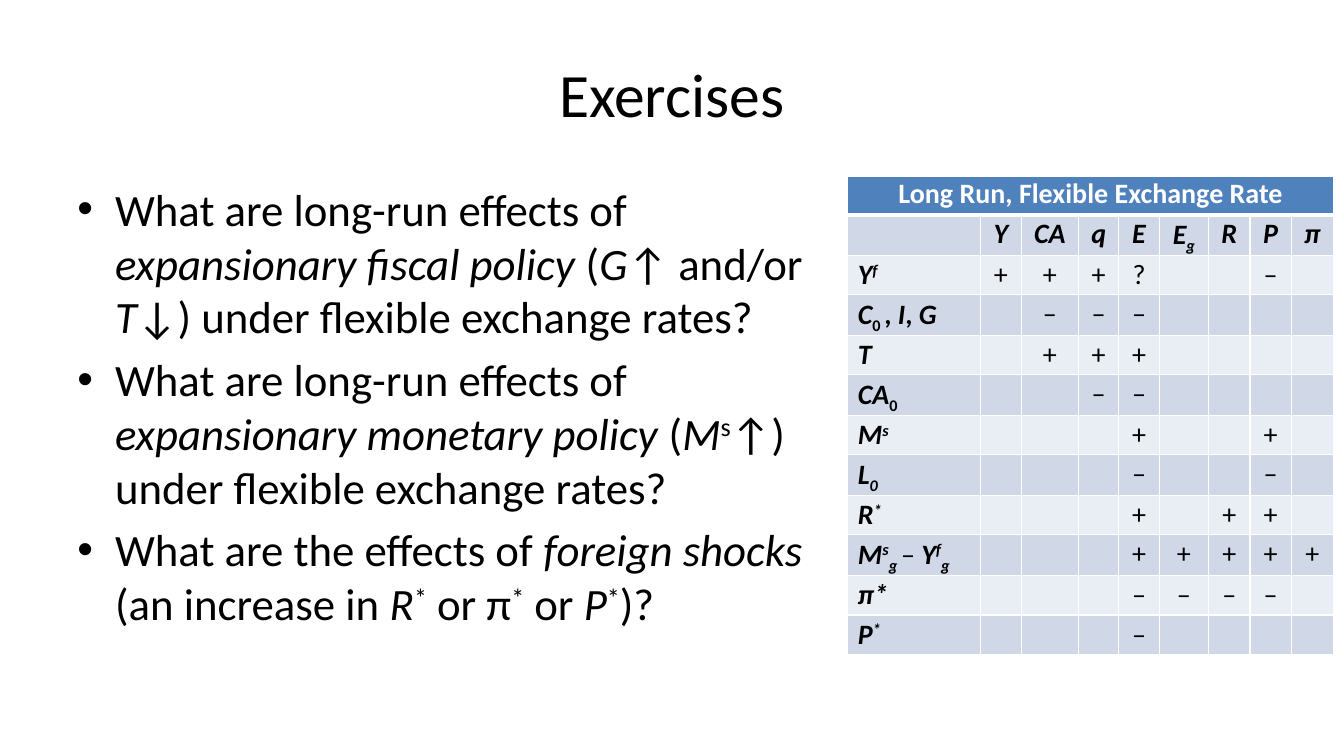
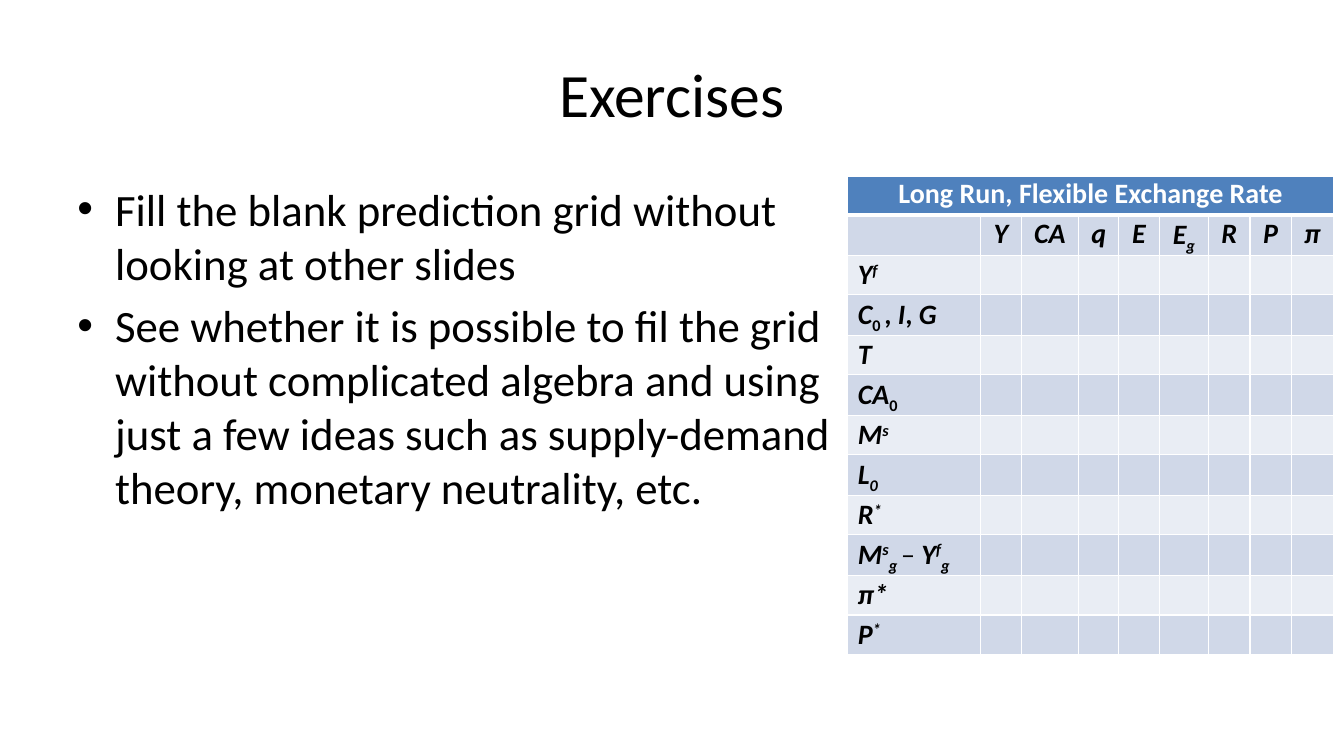
"""Build two exercise slides with a long-run prediction grid."""
import pptx
import pptx.dml.color
import pptx.enum.text
import pptx.oxml.ns
import pptx.util
from lxml import etree

WIDTH = pptx.util.Inches(13.33)
HEIGHT = pptx.util.Inches(7.5)
FONT = "Calibri"
COLORS = {
    "text": "000000",
    "white": "FFFFFF",
    "header": "4F81BD",
    "dark band": "D0D8E8",
    "light band": "E9EDF4",
}
TITLE_BOX = (0.05, 0.04, 0.9, 1 / 6)
CONTENT_TOP = 7 / 30
BODY_BOX = (0.05, CONTENT_TOP, 0.58, 0.66)
GRID_LEFT = 0.63
COLUMN_WIDTHS = (1.32, 0.4, 0.57, 0.4, 0.4, 0.49, 0.41, 0.41, 0.42)
HEADER_HEIGHT = 0.38
ROW_HEIGHT = 0.39
BASELINES = {"^": "30000", "_": "-25000"}

GRID_TITLE = "Long Run, Flexible Exchange Rate"
VARIABLES = (
    [("Y", "bi")],
    [("CA", "bi")],
    [("q", "bi")],
    [("E", "bi")],
    [("E", "bi"), ("g", "bi_")],
    [("R", "bi")],
    [("P", "bi")],
    [("π", "bi")],
)
SHOCKS = (
    ([("Y", "bi"), ("f", "bi^")], "+++?  – "),
    ([("C", "bi"), ("0 ", "b_"), (", ", "b"), ("I", "bi"), (", ", "b"), ("G", "bi")], " –––    "),
    ([("T", "bi")], " +++    "),
    ([("CA", "bi"), ("0", "b_")], "  ––    "),
    ([("M", "bi"), ("s", "bi^")], "   +  + "),
    ([("L", "bi"), ("0", "bi_")], "   –  – "),
    ([("R", "bi"), ("*", "bi^")], "   + ++ "),
    ([("M", "bi"), ("s", "bi^"), ("g ", "bi_"), ("– ", ""),
      ("Y", "bi"), ("f", "bi^"), ("g", "bi_")], "   +++++"),
    ([("π*", "bi")], "   –––– "),
    ([("P", "bi"), ("*", "bi^")], "   –    "),
)
QUESTIONS = (
    [("What are long-run effects of ", ""), ("expansionary fiscal policy ", "i"), ("(", ""),
     ("G", "i"), ("↑ and/or ", ""), ("T", "i"), ("↓) under flexible exchange rates?", "")],
    [("What are long-run effects of ", ""), ("expansionary monetary policy ", "i"), ("(", ""),
     ("M", "i"), ("s", "^"), ("↑) under flexible exchange rates?", "")],
    [("What are the effects of ", ""), ("foreign shocks ", "i"), ("(an increase in ", ""),
     ("R", "i"), ("*", "^"), (" or π", ""), ("*", "^"), (" or ", ""),
     ("P", "i"), ("*", "^"), (")?", "")],
)
TASKS = (
    [("Fill the blank prediction grid without looking at other slides", "")],
    [("See whether it is possible to fil the grid without complicated algebra and using "
      "just a few ideas such as supply-demand theory, monetary neutrality, etc.", "")],
)


def color(name):
    return pptx.dml.color.RGBColor.from_string(COLORS[name])


def write_runs(paragraph, pieces, size, color_name="text"):
    for text, style in pieces:
        run = paragraph.add_run()
        run.text = text
        run.font.name = FONT
        run.font.size = pptx.util.Pt(size)
        run.font.color.rgb = color(color_name)
        run.font.bold = "b" in style
        run.font.italic = "i" in style
        for mark, baseline in BASELINES.items():
            if mark in style:
                run._r.get_or_add_rPr().set("baseline", baseline)


def place(shape, box):
    left, top, width, height = box
    shape.left, shape.width = int(left * WIDTH), int(width * WIDTH)
    shape.top, shape.height = int(top * HEIGHT), int(height * HEIGHT)
    shape.text_frame.auto_size = pptx.enum.text.MSO_AUTO_SIZE.NONE


def add_title(slide, text):
    title = slide.shapes.title
    place(title, TITLE_BOX)
    title.text_frame.vertical_anchor = pptx.enum.text.MSO_ANCHOR.MIDDLE
    paragraph = title.text_frame.paragraphs[0]
    paragraph.alignment = pptx.enum.text.PP_ALIGN.CENTER
    write_runs(paragraph, [(text, "")], 44)


def add_bullets(slide, bullets):
    body = slide.placeholders[1]
    place(body, BODY_BOX)
    frame = body.text_frame
    for index, pieces in enumerate(bullets):
        paragraph = frame.add_paragraph() if index else frame.paragraphs[0]
        write_runs(paragraph, pieces, 32)


def set_borders(cell, bottom=1):
    properties = cell._tc.get_or_add_tcPr()
    for side, width in (("L", 1), ("R", 1), ("T", 1), ("B", bottom)):
        line = etree.SubElement(properties, pptx.oxml.ns.qn("a:ln" + side),
                                w=str(pptx.util.Pt(width)))
        fill = etree.SubElement(line, pptx.oxml.ns.qn("a:solidFill"))
        etree.SubElement(fill, pptx.oxml.ns.qn("a:srgbClr"), val=COLORS["white"])


def fill_cell(cell, fill_name, pieces=(), centered=True, header=False):
    set_borders(cell, 3 if header else 1)
    cell.fill.solid()
    cell.fill.fore_color.rgb = color(fill_name)
    cell.margin_left = cell.margin_right = pptx.util.Inches(0.1)
    cell.margin_top = cell.margin_bottom = 0
    paragraph = cell.text_frame.paragraphs[0]
    if centered:
        paragraph.alignment = pptx.enum.text.PP_ALIGN.CENTER
    if not header:
        paragraph.line_spacing = 1.07
    write_runs(paragraph, pieces, 20, "white" if header else "text")


def add_prediction_grid(slide, solved):
    rows = [([], VARIABLES)]
    for label, marks in SHOCKS:
        rows.append((label, [[(mark, "")] if solved and mark != " " else [] for mark in marks]))
    total_width = pptx.util.Inches(sum(COLUMN_WIDTHS))
    total_height = pptx.util.Inches(HEADER_HEIGHT + ROW_HEIGHT * len(rows))
    table = slide.shapes.add_table(
        len(rows) + 1, len(COLUMN_WIDTHS), int(GRID_LEFT * WIDTH) + pptx.util.Inches(0.01),
        int(CONTENT_TOP * HEIGHT), total_width, total_height).table
    for column, width in zip(table.columns, COLUMN_WIDTHS):
        column.width = pptx.util.Inches(width)
    for index, row in enumerate(table.rows):
        row.height = pptx.util.Inches(ROW_HEIGHT if index else HEADER_HEIGHT)

    for cell in table.rows[0].cells:
        fill_cell(cell, "header", header=True)
    table.cell(0, 0).merge(table.cell(0, len(COLUMN_WIDTHS) - 1))
    write_runs(table.cell(0, 0).text_frame.paragraphs[0], [(GRID_TITLE, "b")], 20, "white")
    for row_index, (label, entries) in enumerate(rows, 1):
        band = "dark band" if row_index % 2 else "light band"
        fill_cell(table.cell(row_index, 0), band, label, centered=False)
        for column_index, pieces in enumerate(entries, 1):
            fill_cell(table.cell(row_index, column_index), band, pieces)


def main():
    presentation = pptx.Presentation()
    presentation.slide_width, presentation.slide_height = WIDTH, HEIGHT
    for bullets, solved in ((QUESTIONS, True), (TASKS, False)):
        slide = presentation.slides.add_slide(presentation.slide_layouts[1])
        add_title(slide, "Exercises")
        add_bullets(slide, bullets)
        add_prediction_grid(slide, solved)
    presentation.save("out.pptx")


if __name__ == "__main__":
    main()
